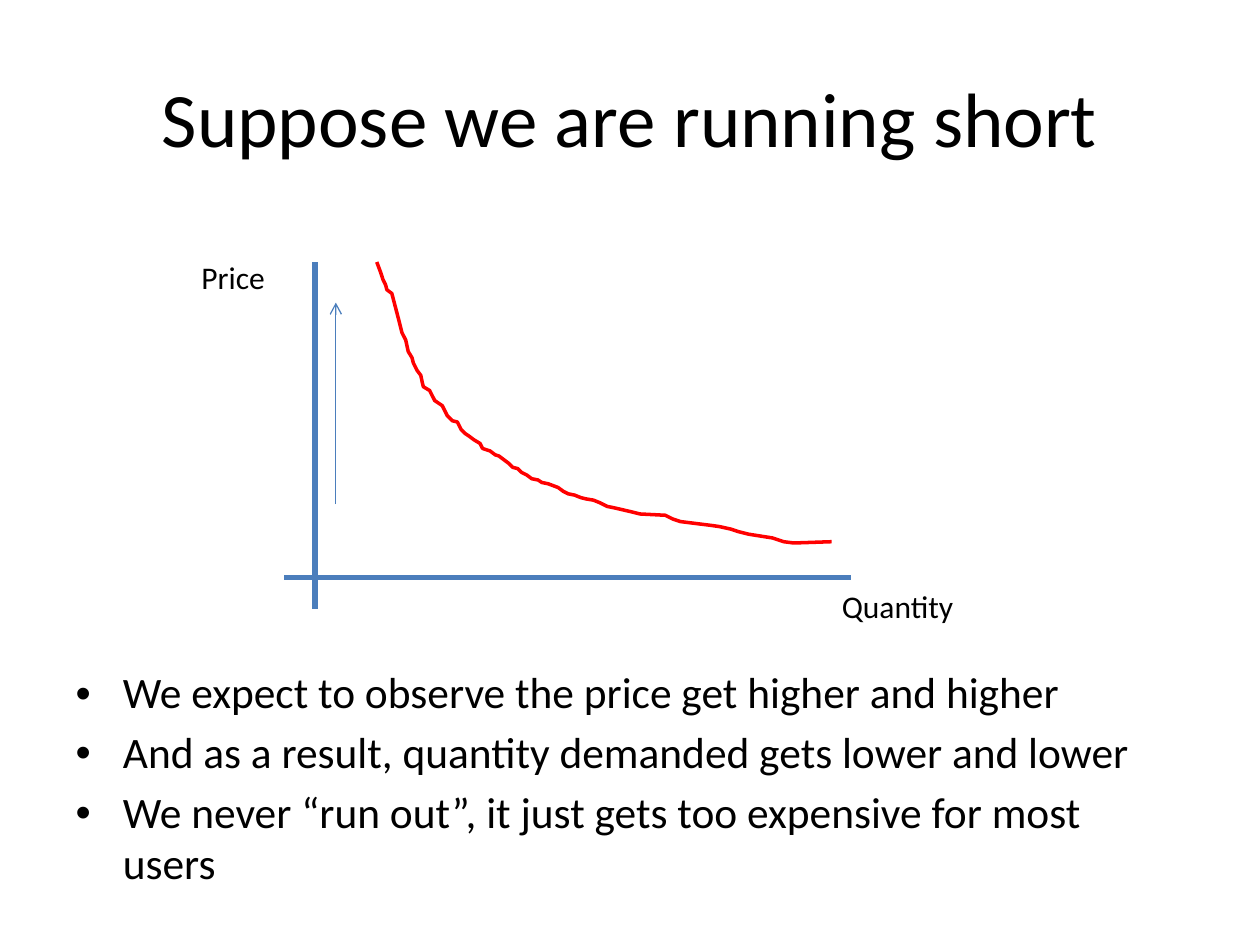
"""Build a slide showing how price rises along a demand curve as supply runs short."""
from dataclasses import dataclass

from lxml import etree
from pptx import Presentation
from pptx import util as u
from pptx.dml.color import RGBColor
from pptx.enum import shapes, text
from pptx.oxml import ns


@dataclass(frozen=True)
class Theme:
    font: str = "Calibri"
    ink: RGBColor = RGBColor(0, 0, 0)
    axis: RGBColor = RGBColor(0x4B, 0x7E, 0xBC)
    demand: RGBColor = RGBColor(0xFF, 0, 0)
    title_size: float = 44
    body_size: float = 24.8
    label_size: float = 18


THEME = Theme()
HUNDREDTH_INCH = u.Cm(2.54) / 100
POINTS = [
    "We expect to observe the price get higher and higher",
    "And as a result, quantity demanded gets lower and lower",
    "We never “run out”, it just gets too expensive for most users",
]
DEMAND = [
    (299, 208), (302, 216), (304, 222), (306, 226), (307, 230), (311, 233),
    (317, 256), (318, 260), (319, 264), (322, 270), (324, 279), (327, 284),
    (328, 288), (331, 294), (334, 298), (335, 303), (336, 307), (341, 310),
    (345, 318), (351, 322), (355, 330), (359, 334), (363, 335), (366, 341),
    (369, 344), (372, 346), (376, 349), (381, 352), (383, 356), (389, 358),
    (393, 361), (396, 362), (404, 368), (407, 371), (411, 372), (414, 375),
    (418, 377), (422, 380), (427, 381), (430, 383), (435, 384), (443, 387),
    (447, 390), (451, 392), (456, 393), (461, 395), (465, 396), (471, 397),
    (476, 399), (482, 402), (487, 403), (500, 406), (508, 408), (528, 409),
    (534, 412), (540, 414), (564, 417), (571, 418), (580, 420), (586, 422),
    (590, 423), (594, 424), (613, 427), (622, 430), (630, 431), (660, 430),
]


def place(shape, left, top, width, height):
    """Put a shape at a position and size in centimetres."""
    shape.left, shape.top, shape.width, shape.height = map(u.Cm, (left, top, width, height))


def style(paragraph, size):
    """Apply the theme font at the given size."""
    paragraph.font.name = THEME.font
    paragraph.font.size = u.Pt(size)
    paragraph.font.color.rgb = THEME.ink


def fill_placeholder(placeholder, lines, size):
    """Write themed paragraphs into a placeholder of fixed size."""
    frame = placeholder.text_frame
    frame.text = "\n".join(lines)
    frame.auto_size = text.MSO_AUTO_SIZE.NONE
    for paragraph in frame.paragraphs:
        style(paragraph, size)


def add_label(slide, wording, left, top, width):
    """Add an axis label."""
    label = slide.shapes.add_textbox(*map(u.Cm, (left, top, width, 1.03)))
    frame = label.text_frame
    frame.word_wrap = True
    frame.auto_size = text.MSO_AUTO_SIZE.SHAPE_TO_FIT_TEXT
    frame.text = wording
    style(frame.paragraphs[0], THEME.label_size)


def add_line(slide, start, end, weight, arrow=False):
    """Add a straight line, with an open arrowhead at its end if asked."""
    line = slide.shapes.add_connector(
        shapes.MSO_CONNECTOR.STRAIGHT, *map(u.Cm, (*start, *end)))
    line.line.color.rgb = THEME.axis
    line.line.width = u.Pt(weight)
    properties = line._element.spPr
    if arrow:
        etree.SubElement(properties.find(ns.qn("a:ln")), ns.qn("a:tailEnd"), type="arrow")
    etree.SubElement(properties, ns.qn("a:effectLst"))


def add_demand_curve(slide):
    """Draw the demand curve through its points."""
    start, *rest = DEMAND
    builder = slide.shapes.build_freeform(*start, scale=HUNDREDTH_INCH)
    builder.add_line_segments(rest, close=False)
    curve = builder.convert_to_shape()
    curve.fill.background()
    curve.line.color.rgb = THEME.demand
    curve.line.width = u.Pt(2)
    curve.shadow.inherit = False


def main():
    """Build and save the slide."""
    deck = Presentation()
    deck.slide_width, deck.slide_height = u.Cm(25.4), u.Cm(19.05)
    slide = deck.slides.add_slide(deck.slide_layouts[1])
    title, body = slide.placeholders

    place(title, 1.27, 0.76, 22.86, 3.18)
    fill_placeholder(title, ["Suppose we are running short"], THEME.title_size)
    place(body, 1.27, 13.34, 22.86, 4.88)
    fill_placeholder(body, POINTS, THEME.body_size)
    for paragraph in body.text_frame.paragraphs:
        paragraph.line_spacing = 0.98

    add_line(slide, (6.35, 5.29), (6.35, 12.28), 3)
    add_line(slide, (17.15, 11.64), (5.72, 11.64), 3)
    add_demand_curve(slide)
    add_label(slide, "Quantity", 16.72, 11.7, 3.6)
    add_label(slide, "Price", 3.81, 5.08, 1.91)
    add_line(slide, (6.77, 10.16), (6.77, 6.1), 0.75, arrow=True)

    deck.save("out.pptx")


if __name__ == "__main__":
    main()
